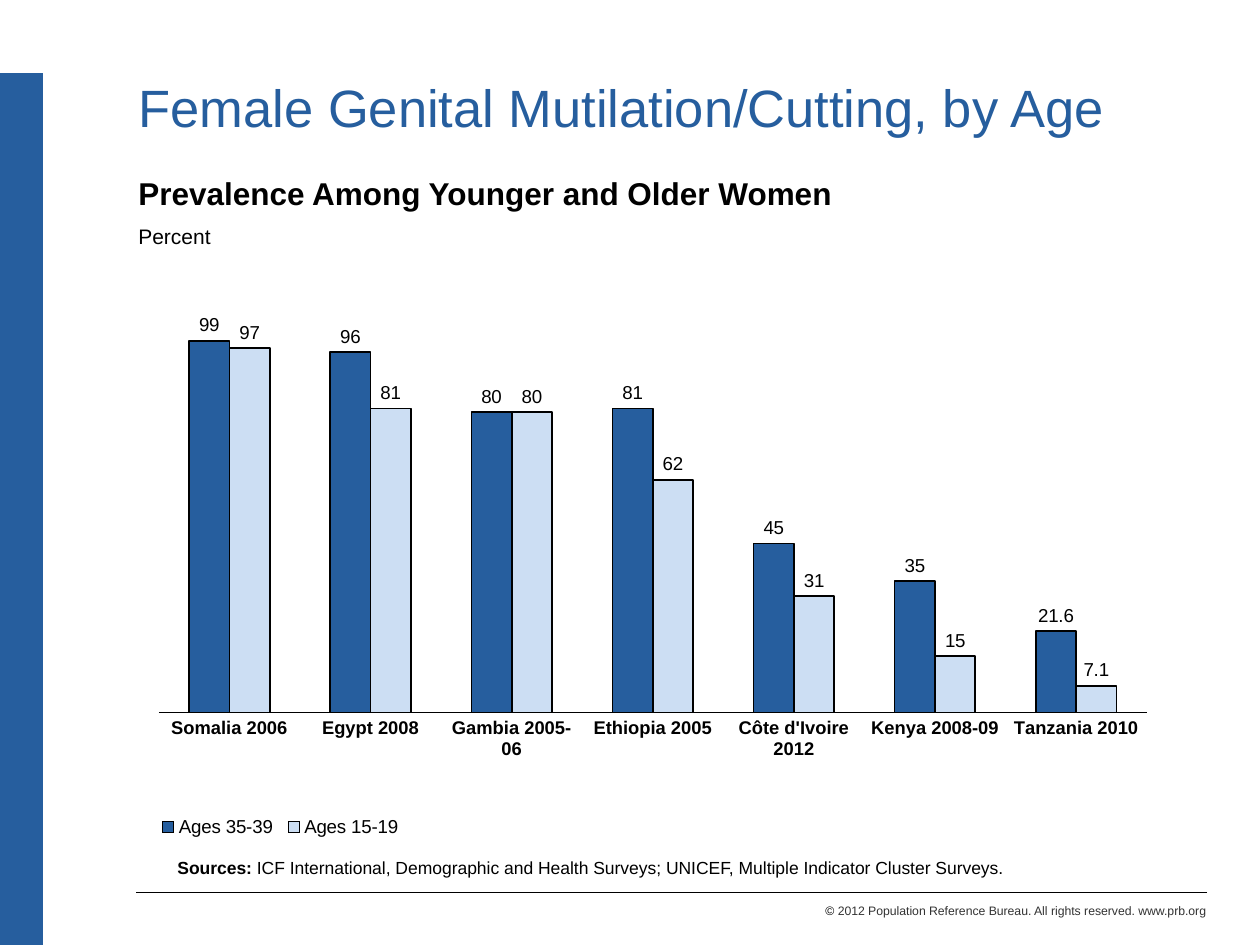
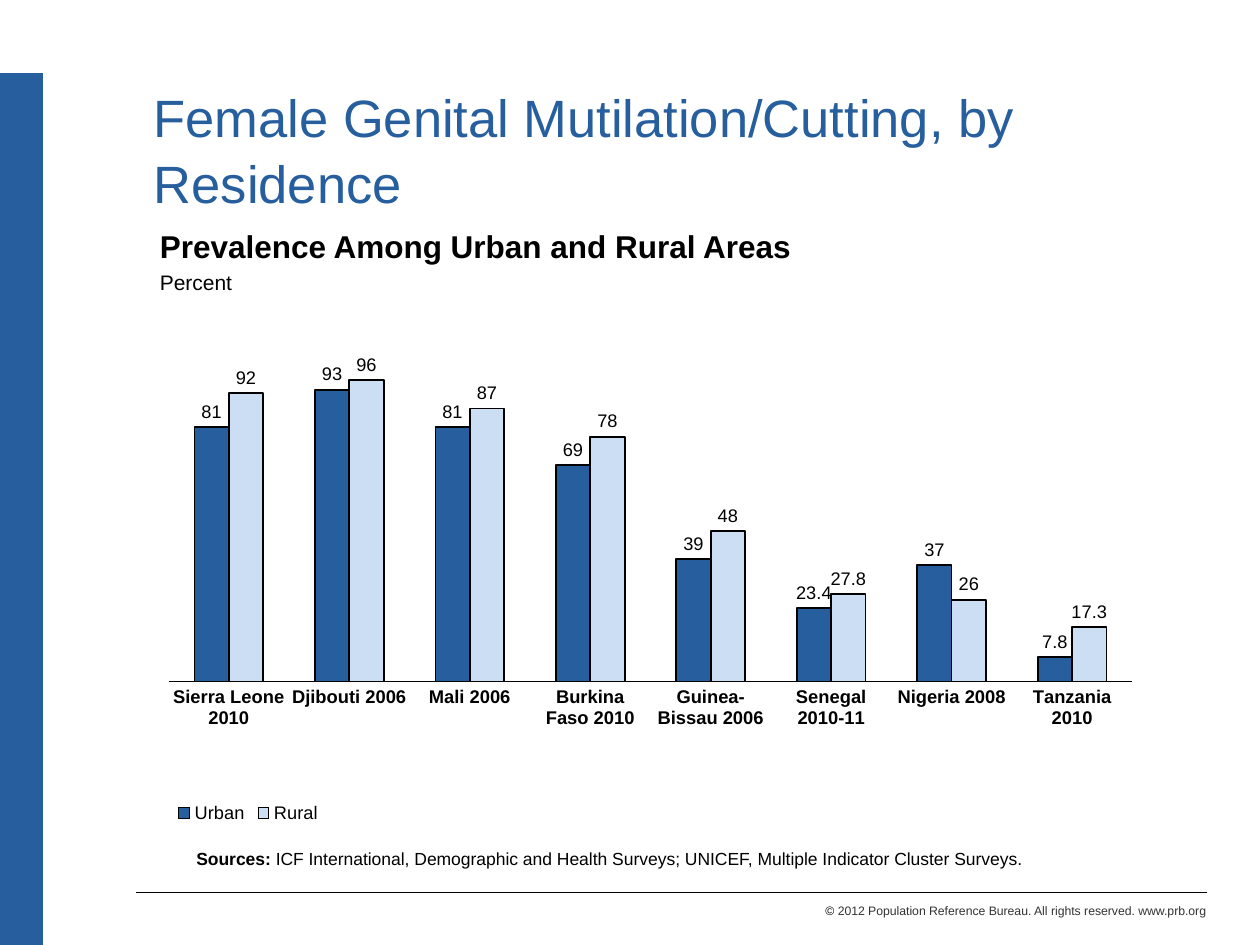
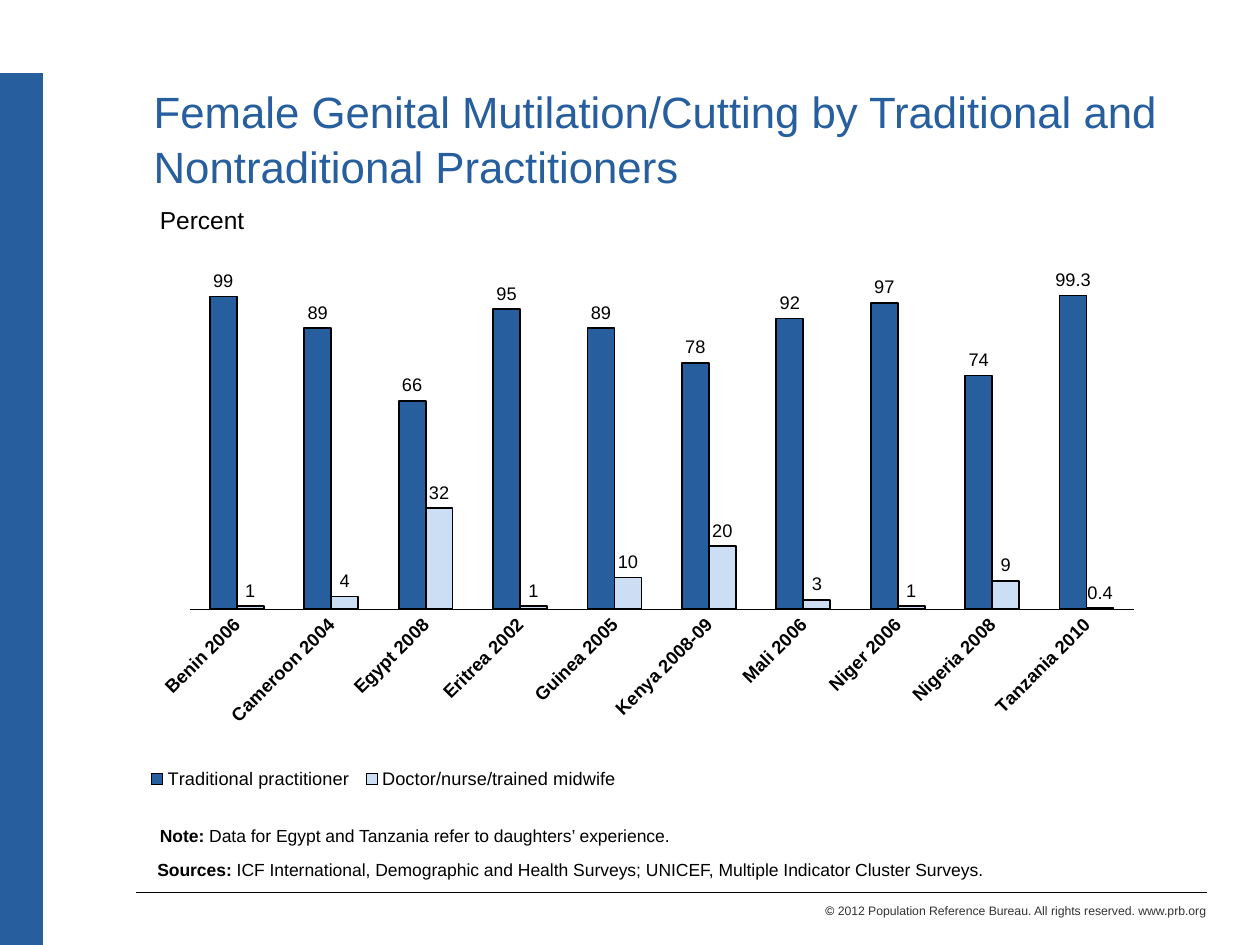
from lxml import etree
from pptx import Presentation
from pptx import util as u
from pptx.chart import data as chart_data
from pptx.dml import color
from pptx.enum import chart as charts, shapes, text
from pptx.oxml import ns

COLORS = {"blue": "265E9E", "pale": "CCDEF3", "black": "000000", "gray": "333333"}
FONT = "Arial"
SURVEYS = [("Sources:", True),
           (" ICF International, Demographic and Health Surveys; "
            "UNICEF, Multiple Indicator Cluster Surveys.", False)]


def rgb(name):
    return color.RGBColor.from_string(COLORS[name])


def style_font(font, size, bold=False, fill="black"):
    font.name, font.size, font.bold = FONT, u.Pt(size), bold
    font.color.rgb = rgb(fill)


def add_text(paragraph, wording, size, bold=False, fill="black"):
    run = paragraph.add_run()
    run.text = wording
    style_font(run.font, size, bold, fill)


def place(element, position, **settings):
    """Give a chart part a manual layout, as fractions of the chart."""
    for old in element.findall(ns.qn("c:layout")):
        element.remove(old)
    layout = etree.Element(ns.qn("c:layout"))
    manual = etree.SubElement(layout, ns.qn("c:manualLayout"))
    settings.update(xMode="edge", yMode="edge", **dict(zip("xywh", position)))
    for tag, value in settings.items():
        etree.SubElement(manual, ns.qn(f"c:{tag}")).set("val", str(value))
    legend_position = element.find(ns.qn("c:legendPos"))
    if legend_position is None:
        element.insert(0, layout)
    else:
        legend_position.addnext(layout)


class Deck:
    def __init__(self):
        self.presentation = Presentation()
        self.presentation.slide_width = u.Inches(10)
        self.presentation.slide_height = u.Inches(7.5)
        self.slide = None

    def start(self, title, left=1.12, top=0.58, size=30):
        """Add a slide with its title, side band and footer."""
        layout = self.presentation.slide_layouts[5]
        self.slide = self.presentation.slides.add_slide(layout)
        self.line((0.17, 0.58), (0.17, 7.5), "blue", 25)
        self.line((9.58, 7.08), (1.08, 7.08), "black", 0.5)
        footer = self.box(4.25, 7.12, 5.42, 0.22)
        footer.alignment = text.PP_ALIGN.RIGHT
        add_text(footer, "© ", 7)
        add_text(footer, "2012 Population Reference Bureau. All rights reserved. www.prb.org",
                 7, fill="gray")
        shape = self.slide.shapes.title
        shape.left, shape.top = u.Inches(left), u.Inches(top)
        shape.width, shape.height = u.Inches(8.46), u.Inches(1.08)
        frame = shape.text_frame
        frame.auto_size = text.MSO_AUTO_SIZE.NONE
        frame.vertical_anchor = text.MSO_ANCHOR.TOP
        frame.margin_top = u.Inches(0.07)
        paragraph = frame.paragraphs[0]
        paragraph.alignment = text.PP_ALIGN.LEFT
        paragraph.line_spacing = 1.05
        add_text(paragraph, title, size, fill="blue")

    def line(self, start, end, fill, width):
        connector = self.slide.shapes.add_connector(
            shapes.MSO_CONNECTOR.STRAIGHT, *map(u.Inches, start + end))
        connector.line.color.rgb = rgb(fill)
        connector.line.width = u.Pt(width)
        properties = connector._element.spPr
        etree.SubElement(properties, ns.qn("a:effectLst"))

    def box(self, left, top, width, height, wrap=True):
        """Add a text box and return its first paragraph."""
        shape = self.slide.shapes.add_textbox(*map(u.Inches, (left, top, width, height)))
        shape.text_frame.word_wrap = wrap
        return shape.text_frame.paragraphs[0]

    def heading(self, wording, left, top, width, height, gap):
        """Add the chart heading, with its unit below."""
        paragraph = self.box(left, top, width, height)
        add_text(paragraph, wording, 18, bold=True)
        unit = paragraph._parent.add_paragraph()
        unit.space_before = u.Pt(gap)
        add_text(unit, "Percent", 12)

    def note(self, parts, left, top, width, wrap=True):
        paragraph = self.box(left, top, width, 0.27, wrap)
        for wording, bold in parts:
            add_text(paragraph, wording, 10, bold)

    def chart(self, frame, categories, series, plot, legend, size=10.4, rotation=0):
        values = chart_data.CategoryChartData()
        values.categories = categories
        for name, numbers in series.items():
            values.add_series(name, numbers)
        chart = self.slide.shapes.add_chart(
            charts.XL_CHART_TYPE.COLUMN_CLUSTERED, *map(u.Inches, frame), values).chart
        chart.has_title = False
        style_font(chart.font, size)

        # Axes
        axis = chart.category_axis
        axis.major_tick_mark = axis.minor_tick_mark = charts.XL_TICK_MARK.NONE
        axis.format.line.color.rgb = rgb("black")
        axis.format.line.width = u.Pt(0.25)
        style_font(axis.tick_labels.font, 10.5, bold=True)
        axis_text = axis._element.find(ns.qn("c:txPr"))
        axis_text.find(ns.qn("a:bodyPr")).set("rot", str(rotation * 60000))
        scale = chart.value_axis
        scale.minimum_scale, scale.maximum_scale = 0, 120
        scale.has_major_gridlines = False
        scale.visible = False

        # Columns and their values
        columns = chart.plots[0]
        columns.gap_width, columns.overlap = 150, 0
        columns.vary_by_categories = False
        for one, fill in zip(columns.series, ("blue", "pale")):
            one.format.fill.solid()
            one.format.fill.fore_color.rgb = rgb(fill)
            one.format.line.color.rgb = rgb("black")
            one.format.line.width = u.Pt(0.95)
            labels = one.data_labels
            labels.show_value = True
            labels.position = charts.XL_LABEL_POSITION.OUTSIDE_END
            style_font(labels.font, size)

        # Legend and layout
        chart.has_legend = True
        chart.legend.position = charts.XL_LEGEND_POSITION.BOTTOM
        chart.legend.include_in_layout = False
        style_font(chart.legend.font, size)
        place(chart.legend._element, legend)
        plot_area = chart._chartSpace.chart.plotArea
        place(plot_area, plot, layoutTarget="inner")


def main():
    deck = Deck()

    # By age
    deck.start("Female Genital Mutilation/Cutting, by Age", left=1, top=0.5)
    deck.chart(
        (1.14, 1.97, 8.05, 4.75),
        ["Somalia 2006", "Egypt 2008", "Gambia 2005-06", "Ethiopia 2005",
         "Côte d'Ivoire 2012", "Kenya 2008-09", "Tanzania 2010"],
        {"Ages 35-39": [99, 96, 80, 81, 45, 35, 21.6],
         "Ages 15-19": [97, 81, 80, 62, 31, 15, 7.1]},
        plot=(0.015, 0.023, 0.974, 0.753), legend=(0.01, 0.94, 0.25, 0.055), size=10.7)
    deck.heading("Prevalence Among Younger and Older Women", 1, 1.33, 7, 0.9, gap=7)
    deck.note(SURVEYS, 1.31, 6.75, 6.91, wrap=False)

    # By residence
    deck.start("Female Genital Mutilation/Cutting, by Residence")
    deck.chart(
        (1.22, 2.31, 7.87, 4.28),
        ["Sierra Leone 2010", "Djibouti 2006", "Mali 2006", "Burkina Faso 2010",
         "Guinea-Bissau 2006", "Senegal 2010-11", "Nigeria 2008", "Tanzania 2010"],
        {"Urban": [81, 93, 81, 69, 39, 23.4, 37, 7.8],
         "Rural": [92, 96, 87, 78, 48, 27.8, 26, 17.3]},
        plot=(0.015, 0.026, 0.972, 0.698), legend=(0.018, 0.94, 0.155, 0.055))
    deck.heading("Prevalence Among Urban and Rural Areas", 1.17, 1.75, 8.5, 0.64, gap=3)
    deck.note(SURVEYS, 1.46, 6.68, 7.92)

    # By practitioner
    deck.start("Female Genital Mutilation/Cutting by Traditional and "
               "Nontraditional Practitioners", size=25)
    deck.chart(
        (0.89, 1.72, 8.2, 4.61),
        ["Benin 2006", "Cameroon 2004", "Egypt 2008", "Eritrea 2002", "Guinea 2005",
         "Kenya 2008-09", "Mali 2006", "Niger 2006", "Nigeria 2008", "Tanzania 2010"],
        {"Traditional practitioner": [99, 89, 66, 95, 89, 78, 92, 97, 74, 99.3],
         "Doctor/nurse/trained midwife": [1, 4, 32, 1, 10, 20, 3, 1, 9, 0.4]},
        plot=(0.075, 0.023, 0.914, 0.653), legend=(0.028, 0.94, 0.47, 0.055), rotation=-45)
    add_text(deck.box(1.17, 1.58, 8.5, 0.33), "Percent", 14)
    deck.note(SURVEYS, 1.15, 6.77, 8.42)
    deck.note([("Note:", True),
               (" Data for Egypt and Tanzania refer to daughters’ experience.", False)],
              1.17, 6.5, 7.75)

    deck.presentation.save("out.pptx")


if __name__ == "__main__":
    main()
